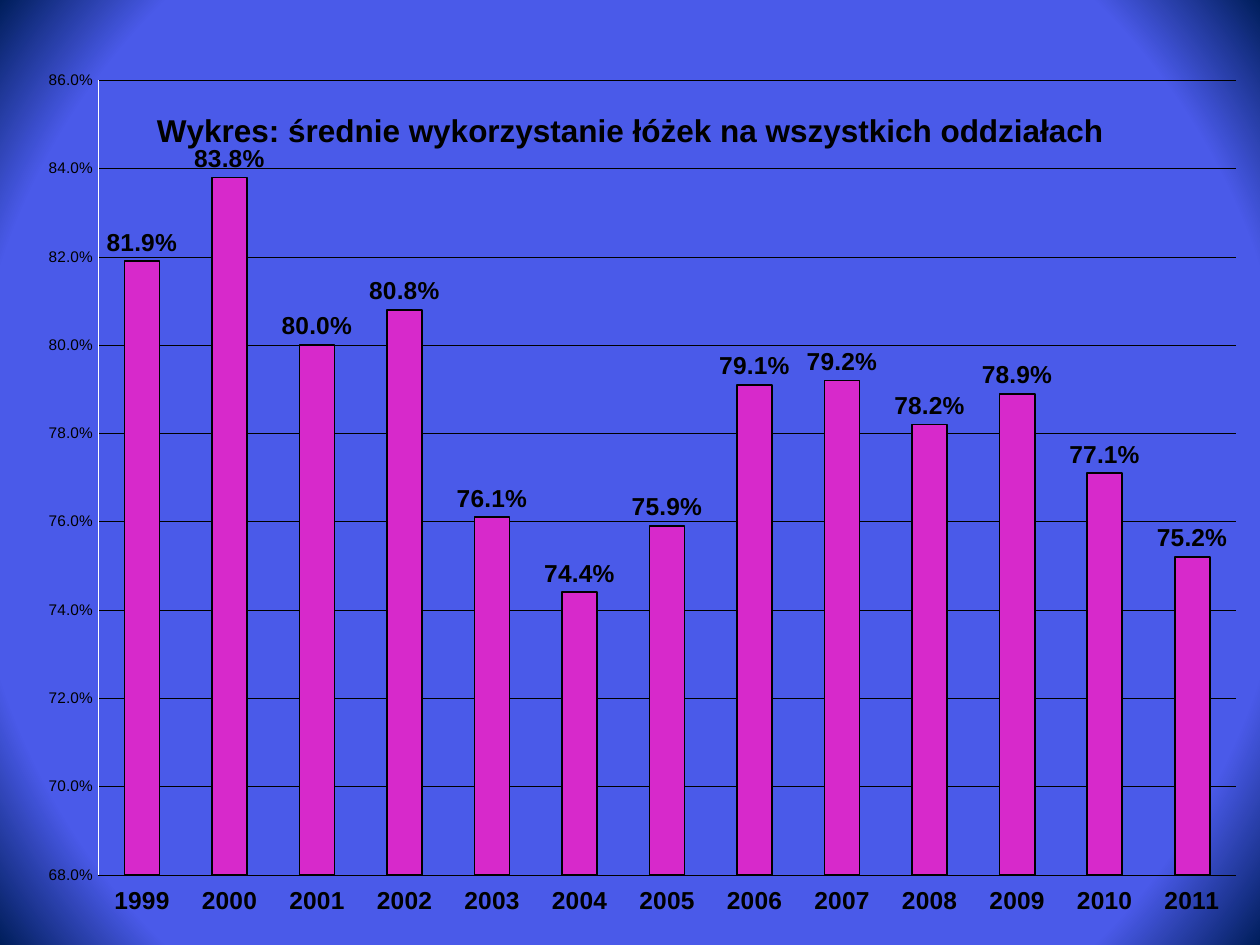
from dataclasses import dataclass

from pptx import Presentation
from pptx import util as u
from pptx.chart.data import CategoryChartData
from pptx.dml.color import RGBColor
from pptx.enum import chart as ch
from pptx.oxml import parse_xml
from pptx.oxml.ns import nsdecls, qn


@dataclass(frozen=True)
class Theme:
    font: str = "Arial"
    ink: str = "000000"
    bar: str = "D729CB"
    axis: str = "FFFFFF"
    back: str = "4A5AE9"
    corner: str = "001E5B"
    title: float = 18
    label: float = 14
    scale: float = 8.8
    hairline: float = 0.25
    outline: float = 1


T = Theme()
YEARS = [str(y) for y in range(1999, 2012)]
OCCUPANCY = [0.819, 0.838, 0.800, 0.808, 0.761, 0.744, 0.759,
             0.791, 0.792, 0.782, 0.789, 0.771, 0.752]


def set_all(obj, values):
    for name, value in values.items():
        setattr(obj, name, value)


def set_font(font, size, bold=False):
    set_all(font, {"name": T.font, "size": u.Pt(size), "bold": bold})
    font.color.rgb = RGBColor.from_string(T.ink)


def set_line(fmt, color, width):
    fmt.line.color.rgb = RGBColor.from_string(color)
    fmt.line.width = u.Pt(width)


def manual_layout(parent, before, **values):
    """Fix the place of a chart part, in fractions of the chart."""
    for old in parent.findall(qn("c:layout")):
        parent.remove(old)
    items = "".join(f'<c:{k} val="{v}"/>' for k, v in values.items())
    parent.find(qn(before)).addprevious(parse_xml(
        f'<c:layout {nsdecls("c")}><c:manualLayout>{items}</c:manualLayout></c:layout>'))


def paint_background(slide):
    """Radial gradient, dark only in the corners."""
    fill = slide.background.fill
    fill.gradient()
    stops = "".join(
        f'<a:gs pos="{pos * 1000}"><a:srgbClr val="{color}"/></a:gs>'
        for pos, color in ((0, T.back), (84, T.back), (100, T.corner)))
    grad = slide.background._cSld.find(".//" + qn("a:gradFill"))
    grad.getparent().replace(grad, parse_xml(
        f'<a:gradFill {nsdecls("a")} rotWithShape="1"><a:gsLst>{stops}</a:gsLst>'
        '<a:path path="circle"><a:fillToRect l="50000" t="50000" r="50000" b="50000"/>'
        '</a:path></a:gradFill>'))


def add_occupancy_chart(slide, left, top, width, height):
    data = CategoryChartData(number_format="0.0%")
    data.categories = YEARS
    data.add_series("Series 1", OCCUPANCY)
    chart = slide.shapes.add_chart(ch.XL_CHART_TYPE.COLUMN_CLUSTERED,
                                   left, top, width, height, data).chart
    chart.has_legend = False
    set_font(chart.font, T.scale)

    # Title, laid over the plot
    tf = chart.chart_title.text_frame
    tf.text = "Wykres: średnie wykorzystanie łóżek na wszystkich oddziałach "
    set_font(tf.paragraphs[0].runs[0].font, T.title, True)
    title = chart.chart_title._element
    title.find(qn("c:overlay")).set("val", "1")
    manual_layout(title, "c:overlay", xMode="edge", yMode="edge", x=0.12, y=0.11)

    # Plot area
    manual_layout(chart._chartSpace.find(".//" + qn("c:plotArea")), "c:barChart",
                  layoutTarget="inner", xMode="edge", yMode="edge",
                  x=0.078, y=0.085, w=0.903, h=0.841)

    # Axes
    cat, val = chart.category_axis, chart.value_axis
    for axis, size, bold, color in ((cat, T.label, True, T.ink),
                                    (val, T.scale, False, T.axis)):
        set_all(axis, {"major_tick_mark": ch.XL_TICK_MARK.NONE,
                       "minor_tick_mark": ch.XL_TICK_MARK.NONE})
        set_font(axis.tick_labels.font, size, bold)
        set_line(axis.format, color, T.hairline)
    cat.tick_label_position = ch.XL_TICK_LABEL_POSITION.LOW
    set_all(val, {"minimum_scale": 0.68, "maximum_scale": 0.86,
                  "major_unit": 0.02, "has_major_gridlines": True})
    set_line(val.major_gridlines.format, T.ink, T.hairline)
    set_all(val.tick_labels, {"number_format": "0.0%",
                              "number_format_is_linked": False})

    # Columns and their labels
    plot = chart.plots[0]
    set_all(plot, {"gap_width": 150, "vary_by_categories": False})
    series = plot.series[0]
    series.invert_if_negative = False
    series.format.fill.solid()
    series.format.fill.fore_color.rgb = RGBColor.from_string(T.bar)
    set_line(series.format, T.ink, T.outline)
    labels = series.data_labels
    set_all(labels, {"show_value": True, "number_format": "0.0%",
                     "number_format_is_linked": False,
                     "position": ch.XL_LABEL_POSITION.OUTSIDE_END})
    set_font(labels.font, T.label, True)


def main():
    prs = Presentation()
    prs.slide_width, prs.slide_height = u.Cm(25.4), u.Cm(19.05)
    s = prs.slides.add_slide(prs.slide_layouts[6])
    paint_background(s)
    add_occupancy_chart(s, 0, 0, prs.slide_width, prs.slide_height)
    prs.save("out.pptx")


if __name__ == "__main__":
    main()
